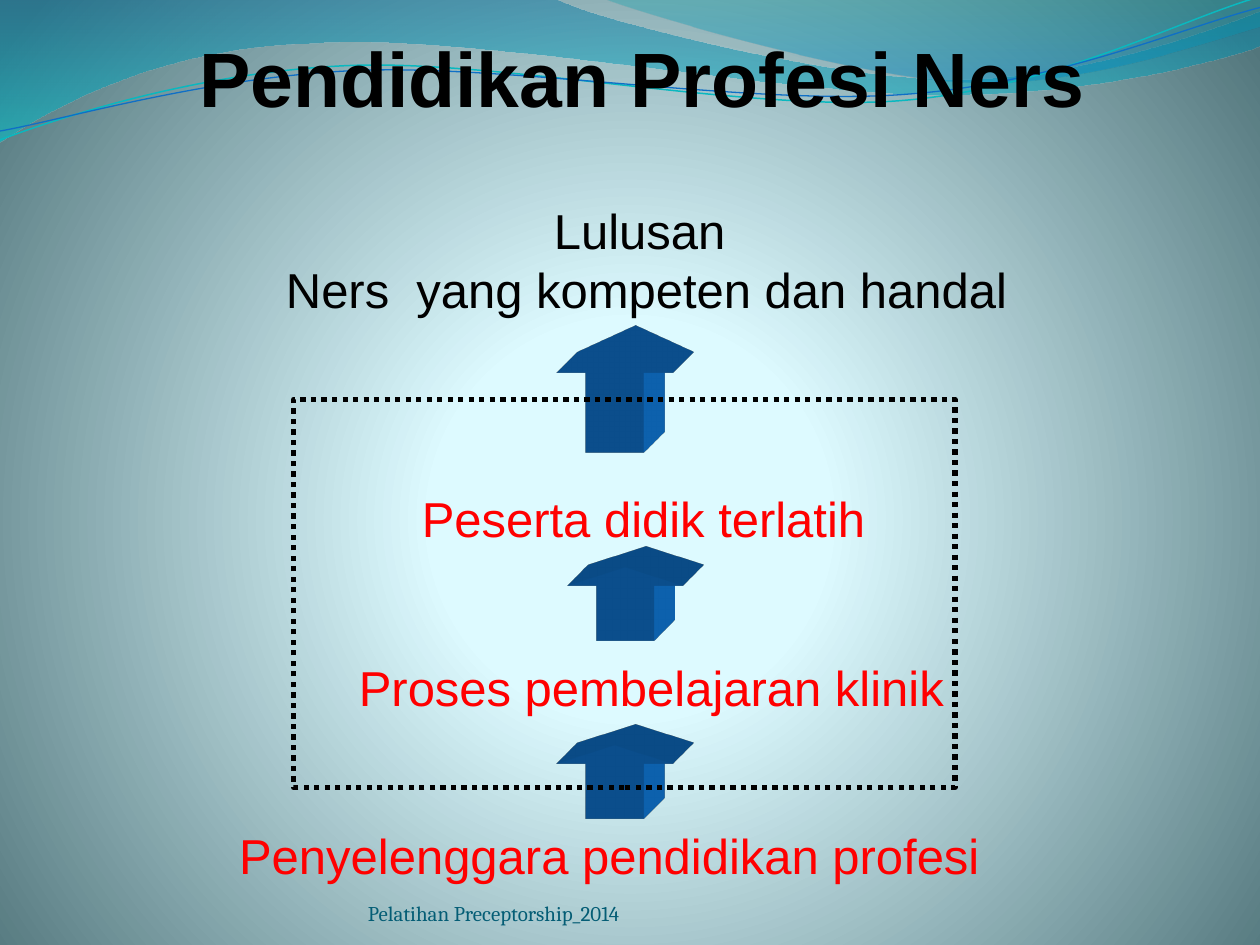
from dataclasses import dataclass
from math import cos, radians, sin

from lxml import etree
from pptx import Presentation
from pptx.dml.color import RGBColor
from pptx.enum.dml import MSO_LINE
from pptx.enum.shapes import MSO_SHAPE
from pptx.enum.text import MSO_ANCHOR, MSO_AUTO_SIZE, PP_ALIGN
from pptx.oxml.ns import qn
from pptx.util import Inches, Pt

LEFT, CENTER = PP_ALIGN.LEFT, PP_ALIGN.CENTER
TOP, BOTTOM = MSO_ANCHOR.TOP, MSO_ANCHOR.BOTTOM
GROW, FIXED = MSO_AUTO_SIZE.SHAPE_TO_FIT_TEXT, MSO_AUTO_SIZE.NONE
DOTS = MSO_LINE.ROUND_DOT  # written as sysDot
ARROW, BOX = MSO_SHAPE.DOWN_ARROW, MSO_SHAPE.RECTANGLE


@dataclass(frozen=True)
class Theme:
    ink: str = "000000"
    key: str = "FF0000"
    note: str = "045D75"
    teal: str = "0AB8BF"
    blue: str = "0F6FC6"
    sans: str = "Arial"
    serif: str = "Cambria"
    head: int = 44
    body: int = 28
    small: int = 12
    glow: tuple = ((0, "DEFBFF", 100), (25, "DDFAFF", 100), (100, "52767C", 100))
    wave: tuple = ((0, "0074A1", 45), (100, "00C6CF", 55))
    crest: tuple = ((0, "00A1A9", 30), (80, "008BBF", 45))


def add(root, tag, **values):
    return etree.SubElement(root, qn(tag), **values)


def spin(dot, pivot, angle):
    dx, dy = dot[0] - pivot[0], dot[1] - pivot[1]
    c, s = cos(radians(angle)), sin(radians(angle))
    return pivot[0] + dx * c - dy * s, pivot[1] + dx * s + dy * c


def blend(stops, circle=False):
    """Make a gradFill element: from top to bottom, or round a centre."""
    grad = etree.Element(qn("a:gradFill"), rotWithShape="1")
    row = add(grad, "a:gsLst")
    for at, color, solid in stops:
        tint = add(add(row, "a:gs", pos=str(at * 1000)), "a:srgbClr", val=color)
        if solid < 100:
            add(tint, "a:alpha", val=str(solid * 1000))
    if circle:
        add(add(grad, "a:path", path="circle"), "a:fillToRect",
            l="10000", t="110000", r="10000", b="100000")
    else:
        add(grad, "a:lin", ang="5400000", scaled="0")
    return grad


class Deck:
    def __init__(self, theme):
        self.theme = theme
        self.prs = Presentation()
        self.prs.slide_width, self.prs.slide_height = Inches(10), Inches(7.5)
        self.slide = self.prs.slides.add_slide(self.prs.slide_layouts[5])
        self.shapes = self.slide.shapes

    def paint(self, fill, root, grad):
        """Set a solid fill, then swap its element for a gradient."""
        fill.solid()
        fill.fore_color.rgb = RGBColor(0, 0, 0)
        old = next(root.iter(qn("a:solidFill")))
        old.getparent().replace(old, grad)

    def back(self):
        self.paint(self.slide.background.fill, self.slide._element,
                   blend(self.theme.glow, circle=True))

    def dress(self, shape, fill=None, line=None, width=1, dash=None):
        shape.shadow.inherit = False
        if fill:
            shape.fill.solid()
            shape.fill.fore_color.rgb = RGBColor.from_string(fill)
        else:
            shape.fill.background()
        if line:
            shape.line.color.rgb = RGBColor.from_string(line)
            shape.line.width = Pt(width)
            shape.line.dash_style = dash
        else:
            shape.line.fill.background()

    def free(self, start, *parts, grad=None, close=True, pivot=(0, 0), turn=0,
             **style):
        """Draw line ends (2 numbers) and cubic curves (6 numbers)."""
        dots = [start] + [part[i:i + 2] for part in parts
                          for i in range(0, len(part), 2)]
        dots = [tuple(map(Inches, spin(dot, pivot, -turn))) for dot in dots]
        pen = self.shapes.build_freeform(*dots[0], scale=1.0)
        pen.add_line_segments(dots[1:], close=close)
        shape = pen.convert_to_shape()
        shape.rotation = turn
        legs = iter(list(shape._element.iter(qn("a:lnTo"))))
        for part in parts:
            first = next(legs)
            if len(part) == 6:
                first.tag = qn("a:cubicBezTo")
                for leg in (next(legs), next(legs)):
                    first.append(leg[0])
                    leg.getparent().remove(leg)
        self.dress(shape, **style)
        if grad:
            self.paint(shape.fill, shape._element, blend(grad))

    def shape(self, kind, spot, **style):
        shape = self.shapes.add_shape(kind, *map(Inches, spot))
        self.dress(shape, **style)
        return shape

    def arrow(self, *spot):
        """Draw an upward block arrow with depth."""
        arrow = self.shape(ARROW, spot, fill=self.theme.blue)
        arrow.rotation = 180
        arrow.adjustments[0], arrow.adjustments[1] = 0.5, 0.25
        props = arrow._element.spPr
        scene = add(props, "a:scene3d")
        add(scene, "a:camera", prst="legacyObliqueTopRight")
        add(scene, "a:lightRig", rig="legacyFlat3", dir="b")
        solid = add(props, "a:sp3d", extrusionH="430200",
                    prstMaterial="legacyMatte")
        for bevel in ("a:bevelT", "a:bevelB"):
            add(solid, bevel, w="13500", h="13500", prst="angle")
        add(add(solid, "a:extrusionClr"), "a:srgbClr", val=self.theme.blue)

    def text(self, spot, lines, color, size=None, face=None, bold=False,
             align=LEFT, box=None, **frame):
        if box is None:
            box = self.shapes.add_textbox(*map(Inches, spot))
        box._element.getparent().append(box._element)  # bring to front
        box.left, box.top, box.width, box.height = map(Inches, spot)
        look = {"word_wrap": False, "auto_size": GROW, "vertical_anchor": TOP}
        for name, value in (look | frame).items():
            setattr(box.text_frame, name, value)
        font = {"name": face or self.theme.sans, "bold": bold,
                "size": Pt(size or self.theme.body)}
        for i, line in enumerate(lines):
            para = (box.text_frame.add_paragraph() if i
                    else box.text_frame.paragraphs[0])
            para.alignment = align
            run = para.add_run()
            run.text = line
            for name, value in font.items():
                setattr(run.font, name, value)
            run.font.color.rgb = RGBColor.from_string(color)


def main():
    theme = Theme()
    deck = Deck(theme)
    deck.back()

    deck.free((0, 0), (4.4, -0.01), (4.76, 0.17, 6.64, 0.63, 7.58, 0.63),
              (8.53, 0.63, 9.58, 0.26, 10, 0.09), (10.01, 0.36),
              (9.83, 0.44, 8.7, 0.76, 7.46, 0.75),
              (6.22, 0.75, 3.82, 0.28, 2.57, 0.34),
              (1.29, 0.36, 0.46, 0.83, -0.01, 1.13), grad=theme.wave)
    deck.free((4.79, -0.01), (5.09, 0.11, 6.82, 0.62, 7.69, 0.65),
              (8.56, 0.69, 9.61, 0.32, 10, 0.21), (10, 0), grad=theme.crest)
    deck.free((0, 1.11), (0.48, 0.93, 1.58, 0.57, 2.77, 0.52),
              (3.95, 0.47, 5.93, 0.89, 7.13, 0.8),
              (8.33, 0.71, 9.38, 0.15, 9.98, -0.02), close=False,
              pivot=(4.99, 0.58), turn=357.3, line=theme.teal, width=0.85)
    deck.free((0, 1.04), (0.47, 0.96, 1.64, 0.61, 2.83, 0.56),
              (4.03, 0.51, 5.97, 0.84, 7.17, 0.75),
              (8.36, 0.67, 9.41, 0.21, 10, 0.06), close=False,
              pivot=(5, 0.59), turn=357.3, line=theme.blue, width=0.75)

    deck.text((1.48, 1.54, 7.3, 1.04),
              ["Lulusan ", "Ners  yang kompeten dan handal"],
              theme.ink, align=CENTER, word_wrap=True)
    for spot, line in (
            ((3.25, 3.83, 3.76, 0.57), "Peserta didik terlatih"),
            ((2.75, 5.17, 4.9, 0.57), "Proses pembelajaran klinik"),
            ((1.8, 6.5, 6.14, 0.57), "Penyelenggara pendidikan profesi")):
        deck.text(spot, [line], theme.key)
    deck.text((1.48, 0.19, 7.3, 0.84), ["Pendidikan Profesi Ners"], theme.ink,
              size=theme.head, bold=True, box=deck.shapes.title)

    for x, y, h in ((4.42, 2.75, 0.84), (4.5, 4.5, 0.58), (4.42, 5.92, 0.58)):
        deck.arrow(x, y, 0.92, h)
    deck.shape(BOX, (2.33, 3.17, 5.25, 3.08), line=theme.ink, width=3, dash=DOTS)
    sides = ("left", "top", "right", "bottom")
    deck.text((2.92, 6.95, 3.67, 0.4), ["Pelatihan Preceptorship_2014"],
              theme.note, size=theme.small, face=theme.serif, word_wrap=True,
              auto_size=FIXED, vertical_anchor=BOTTOM,
              **{f"margin_{side}": 0 for side in sides})
    deck.prs.save("out.pptx")


if __name__ == "__main__":
    main()
